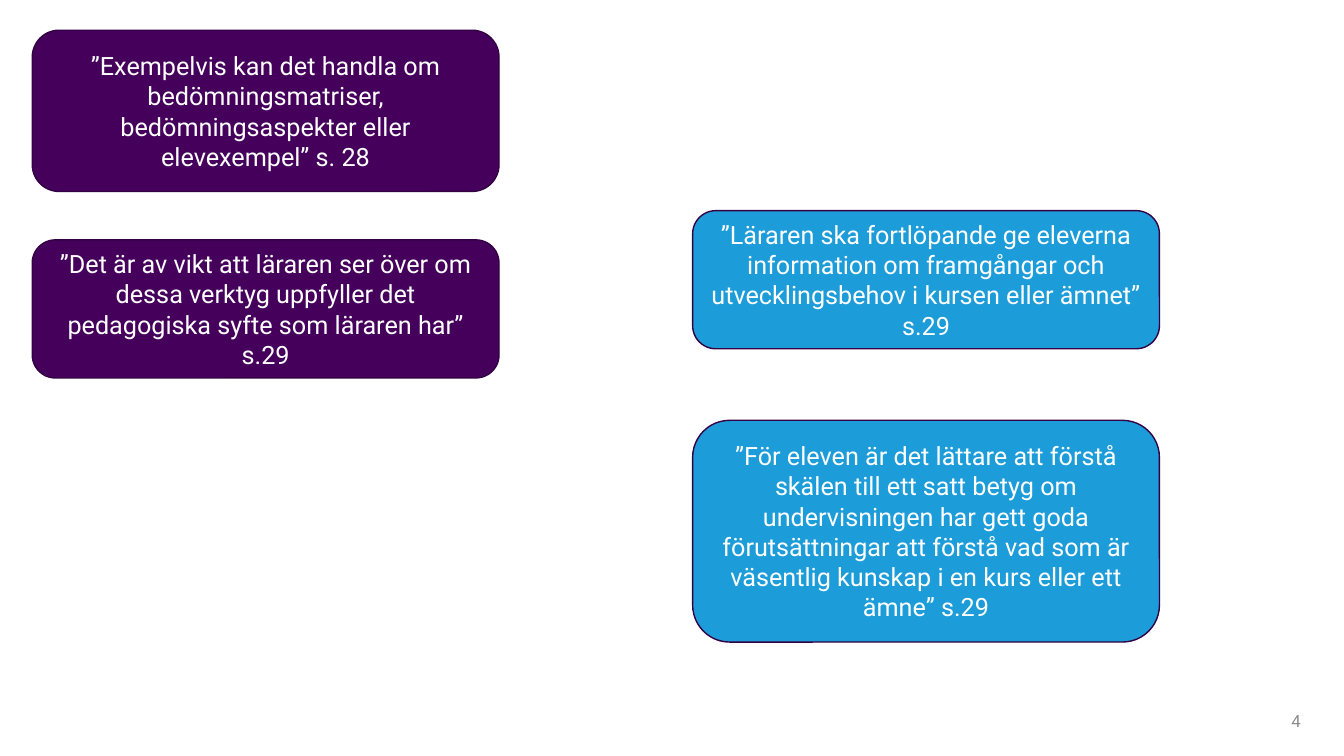
"""Build a slide of four assessment quotes in two coloured columns."""
import pptx
import pptx.util
import pptx.dml.color
import pptx.enum.shapes
import pptx.enum.text

Inches = pptx.util.Inches
Pt = pptx.util.Pt
RGBColor = pptx.dml.color.RGBColor
PP_ALIGN = pptx.enum.text.PP_ALIGN

PURPLE = RGBColor(0x45, 0x00, 0x5C)
BLUE = RGBColor(0x1C, 0x9C, 0xD8)
OUTLINE = RGBColor(0x33, 0x00, 0x44)
WHITE = RGBColor(0xFF, 0xFF, 0xFF)
GREY = RGBColor(0x8C, 0x8C, 0x8C)
FONT = "Roboto"
QUOTE_WIDTH = 4.63
PAGE_NUMBER = "4"

COLUMNS = [
    (0.32, PURPLE, [
        (0.3, 1.6, "”Exempelvis kan det handla om bedömningsmatriser, "
                   "bedömningsaspekter eller elevexempel” s. 28"),
        (2.38, 1.37, "”Det är av vikt att läraren ser över om dessa verktyg "
                     "uppfyller det pedagogiska syfte som läraren har” s.29"),
    ]),
    (6.87, BLUE, [
        (2.09, 1.37, "”Läraren ska fortlöpande ge eleverna information om "
                     "framgångar och utvecklingsbehov i kursen eller ämnet” s.29"),
        (4.17, 2.2, "”För eleven är det lättare att förstå skälen till ett satt "
                    "betyg om undervisningen har gett goda förutsättningar att "
                    "förstå vad som är väsentlig kunskap i en kurs eller ett "
                    "ämne” s.29"),
    ]),
]


def write(shape, text, size, color, alignment):
    frame = shape.text_frame
    frame.word_wrap = True
    frame.vertical_anchor = pptx.enum.text.MSO_ANCHOR.MIDDLE
    paragraph = frame.paragraphs[0]
    paragraph.text = text
    paragraph.alignment = alignment
    paragraph.font.name = FONT
    paragraph.font.size = Pt(size)
    paragraph.font.color.rgb = color


def add_quote(slide, left, top, height, fill, text):
    quote = slide.shapes.add_shape(
        pptx.enum.shapes.MSO_SHAPE.ROUNDED_RECTANGLE,
        Inches(left), Inches(top), Inches(QUOTE_WIDTH), Inches(height))
    quote.shadow.inherit = False
    quote.fill.solid()
    quote.fill.fore_color.rgb = fill
    quote.line.color.rgb = OUTLINE
    quote.line.width = Pt(1)
    write(quote, text, 18, WHITE, PP_ALIGN.CENTER)


def main():
    deck = pptx.Presentation()
    deck.slide_width = Inches(13.33)
    deck.slide_height = Inches(7.5)
    slide = deck.slides.add_slide(deck.slide_layouts[6])
    page_number = slide.shapes.add_textbox(
        Inches(10), Inches(6.95), Inches(3), Inches(0.4))
    write(page_number, PAGE_NUMBER, 12, GREY, PP_ALIGN.RIGHT)
    for left, fill, quotes in COLUMNS:
        for top, height, text in quotes:
            add_quote(slide, left, top, height, fill, text)
    deck.save("out.pptx")


if __name__ == "__main__":
    main()
